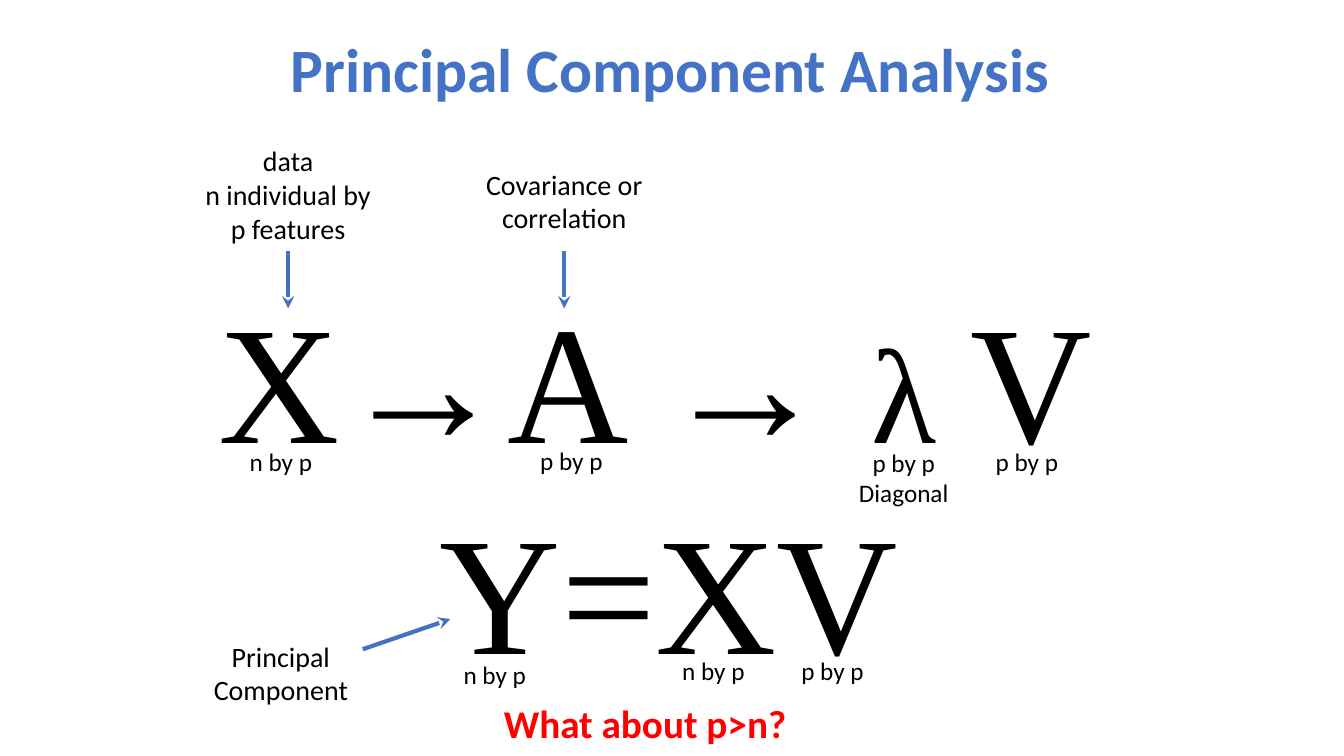
"""Build a slide that outlines principal component analysis."""
from lxml.etree import SubElement
from pptx import Presentation
from pptx.dml.color import RGBColor
from pptx.enum.shapes import MSO_CONNECTOR
from pptx.enum.text import MSO_ANCHOR, PP_ALIGN
from pptx.oxml.ns import qn
from pptx.util import Cm, Pt

COLORS = {"accent": "4472C4", "text": "000000", "question": "FF0000"}
LABEL_WIDTH = 4.72
SIZE_WIDTH, SIZE_HEIGHT = 2.18, 1.02
ARROW_TOP, ARROW_BOTTOM = 6.32, 7.77


def format_paragraph(para, size, color="text", bold=False, font="Calibri"):
    para.alignment = PP_ALIGN.CENTER
    para.font.name = font
    para.font.size = Pt(size)
    para.font.bold = bold
    para.font.color.rgb = RGBColor.from_string(COLORS[color])


def set_title(page, text):
    title = page.shapes.title
    title.left, title.top, title.width, title.height = Cm(2.29), Cm(0), Cm(29.21), Cm(3.68)
    title.text_frame.text = text
    title.text_frame.vertical_anchor = MSO_ANCHOR.MIDDLE
    para = title.text_frame.paragraphs[0]
    para.line_spacing = 0.9
    format_paragraph(para, 44, "accent", bold=True)


def add_text(page, lines, left, top, width, height, size, wrap=True, **style):
    box = page.shapes.add_textbox(Cm(left), Cm(top), Cm(width), Cm(height))
    box.text_frame.word_wrap = wrap
    box.text_frame.text = "\n".join(lines)
    for para in box.text_frame.paragraphs:
        format_paragraph(para, size, **style)
    return box


def add_label(page, lines, left, top, height):
    return add_text(page, lines, left, top, LABEL_WIDTH, height, 20)


def add_formula(page, parts, left, top):
    box = add_text(page, [""], left, top, 23.93, 5.38, 120, font="Times New Roman")
    para = box.text_frame.paragraphs[0]
    for text, size in parts:
        span = para.add_run()
        span.text = text
        span.font.size = Pt(size)


def add_arrow(page, start, end):
    arrow = page.shapes.add_connector(
        MSO_CONNECTOR.STRAIGHT, *(Cm(value) for value in start + end))
    arrow.line.color.rgb = RGBColor.from_string(COLORS["accent"])
    arrow.line.width = Pt(3)
    SubElement(arrow.line._get_or_add_ln(), qn("a:tailEnd"), type="stealth")
    SubElement(arrow._element.spPr, qn("a:effectLst"))
    return arrow


def add_question(page, text):
    box = add_text(page, [text], 1.65, 17.68, 29.21, 1.3, 28, color="question", bold=True)
    box.text_frame.vertical_anchor = MSO_ANCHOR.MIDDLE
    box.text_frame.paragraphs[0].line_spacing = 0.8


def main():
    deck = Presentation()
    deck.slide_width, deck.slide_height = Cm(33.87), Cm(19.05)
    page = deck.slides.add_slide(deck.slide_layouts[5])
    set_title(page, "Principal Component Analysis")

    add_formula(page, [("X→A → ", 120), ("λ ", 96), ("V", 120)], 4.55, 6.81)
    add_formula(page, [("Y=XV", 120)], 4.9, 12.14)

    data = add_label(page, ["data", "n individual by p features"], 4.9, 3.5, 2.82)
    add_label(page, ["Covariance or correlation"], 11.86, 4.09, 1.96)
    add_label(page, ["Principal", "Component"], 4.72, 15.98, 1.96)

    data_arrow = add_arrow(page, (7.26, ARROW_TOP), (7.26, ARROW_BOTTOM))
    data_arrow.begin_connect(data, 2)
    add_arrow(page, (14.22, ARROW_TOP), (14.22, ARROW_BOTTOM))
    add_arrow(page, (9.14, 16.36), (11.35, 15.6))

    for text, left, top in [
        ("n by p", 5.99, 11.13),
        ("p by p", 13.31, 11.1),
        ("p by p", 24.79, 11.13),
        ("n by p", 11.38, 16.48),
        ("n by p", 16.89, 16.38),
        ("p by p", 19.89, 16.38),
    ]:
        add_text(page, [text], left, top, SIZE_WIDTH, SIZE_HEIGHT, 18, wrap=False)
    add_text(page, ["p by p", "Diagonal"], 21.29, 11.15, 2.97, 1.8, 18, wrap=False)

    add_question(page, "What about p>n?")
    deck.save("out.pptx")


if __name__ == "__main__":
    main()
